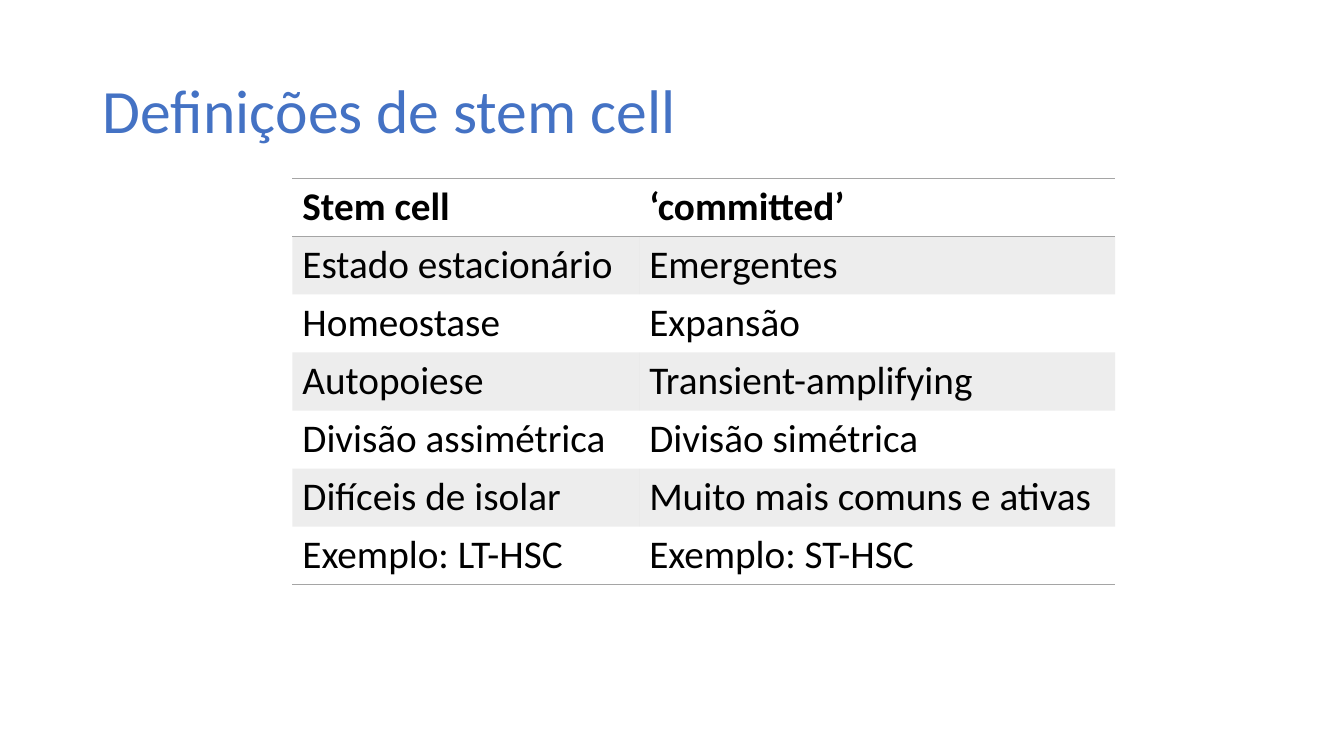
"""Build the slide that contrasts stem cells with committed cells."""
from dataclasses import dataclass

import pptx
import pptx.dml.color
import pptx.enum.text
import pptx.oxml
import pptx.oxml.ns
import pptx.util

EMU_PER_PX = 9144
COLORS = {"heading": "4472C4", "ink": "000000", "gray": "A5A5A5"}
FONT = "Calibri"
BAND_ALPHA = 20000
NO_GRID_STYLE = "{2D5ABB26-0587-4C30-8999-92F81FD0307C}"
COLUMN_WIDTHS = (344, 472)
ROW_HEIGHT = 57


@dataclass(frozen=True)
class Contrast:
    stem: str
    committed: str
    bold: bool = False
    banded: bool = False
    rules: tuple[str, ...] = ()


CONTRASTS = (
    Contrast("Stem cell", "‘committed’", bold=True, rules=("lnT", "lnB")),
    Contrast("Estado estacionário", "Emergentes", banded=True),
    Contrast("Homeostase", "Expansão"),
    Contrast("Autopoiese", "Transient-amplifying", banded=True),
    Contrast("Divisão assimétrica", "Divisão simétrica"),
    Contrast("Difíceis de isolar", "Muito mais comuns e ativas", banded=True),
    Contrast("Exemplo: LT-HSC", "Exemplo: ST-HSC", rules=("lnB",)),
)


def px(length: int) -> pptx.util.Emu:
    return pptx.util.Emu(length * EMU_PER_PX)


def write(frame, text: str, *, size: int, color: str, bold: bool = False,
          spacing: float = 1.0) -> None:
    paragraph = frame.paragraphs[0]
    paragraph.line_spacing = spacing
    run = paragraph.add_run()
    run.text = text
    run.font.name = FONT
    run.font.size = pptx.util.Pt(size)
    run.font.bold = bold
    run.font.color.rgb = pptx.dml.color.RGBColor.from_string(COLORS[color])


def add_rule(cell, side: str) -> None:
    cell._tc.get_or_add_tcPr().append(pptx.oxml.parse_xml(
        f'<a:{side} {pptx.oxml.ns.nsdecls("a")} w="12700"><a:solidFill>'
        f'<a:srgbClr val="{COLORS["gray"]}"/></a:solidFill></a:{side}>'))


def shade(cell, banded: bool) -> None:
    if not banded:
        cell.fill.background()
        return
    cell.fill.solid()
    cell.fill.fore_color.rgb = pptx.dml.color.RGBColor.from_string(COLORS["gray"])
    tint = cell._tc.tcPr.find(".//" + pptx.oxml.ns.qn("a:srgbClr"))
    tint.append(pptx.oxml.parse_xml(
        f'<a:alpha {pptx.oxml.ns.nsdecls("a")} val="{BAND_ALPHA}"/>'))


def add_heading(slide) -> None:
    heading = slide.shapes.title
    heading.left, heading.top, heading.width, heading.height = map(
        px, (92, 40, 1150, 145))
    frame = heading.text_frame
    frame.vertical_anchor = pptx.enum.text.MSO_ANCHOR.MIDDLE
    frame.word_wrap = True
    write(frame, "Definições de stem cell", size=44, color="heading", spacing=0.9)
    frame.paragraphs[0].alignment = pptx.enum.text.PP_ALIGN.LEFT


def add_contrasts(slide) -> None:
    contrasts = slide.shapes.add_table(
        len(CONTRASTS), len(COLUMN_WIDTHS), px(290), px(177),
        px(sum(COLUMN_WIDTHS)), px(ROW_HEIGHT * len(CONTRASTS))).table
    contrasts._tbl.tblPr.find(pptx.oxml.ns.qn("a:tableStyleId")).text = NO_GRID_STYLE
    contrasts.horz_banding = False
    for column, width in zip(contrasts.columns, COLUMN_WIDTHS):
        column.width = px(width)
    for row, contrast in zip(contrasts.rows, CONTRASTS):
        for cell, text in zip(row.cells, (contrast.stem, contrast.committed)):
            write(cell.text_frame, text, size=28, color="ink", bold=contrast.bold)
            for side in contrast.rules:
                add_rule(cell, side)
            shade(cell, contrast.banded)


def main() -> None:
    presentation = pptx.Presentation()
    presentation.slide_width, presentation.slide_height = px(1333), px(750)
    slide = presentation.slides.add_slide(presentation.slide_layouts[5])
    add_heading(slide)
    add_contrasts(slide)
    presentation.save("out.pptx")


if __name__ == "__main__":
    main()
